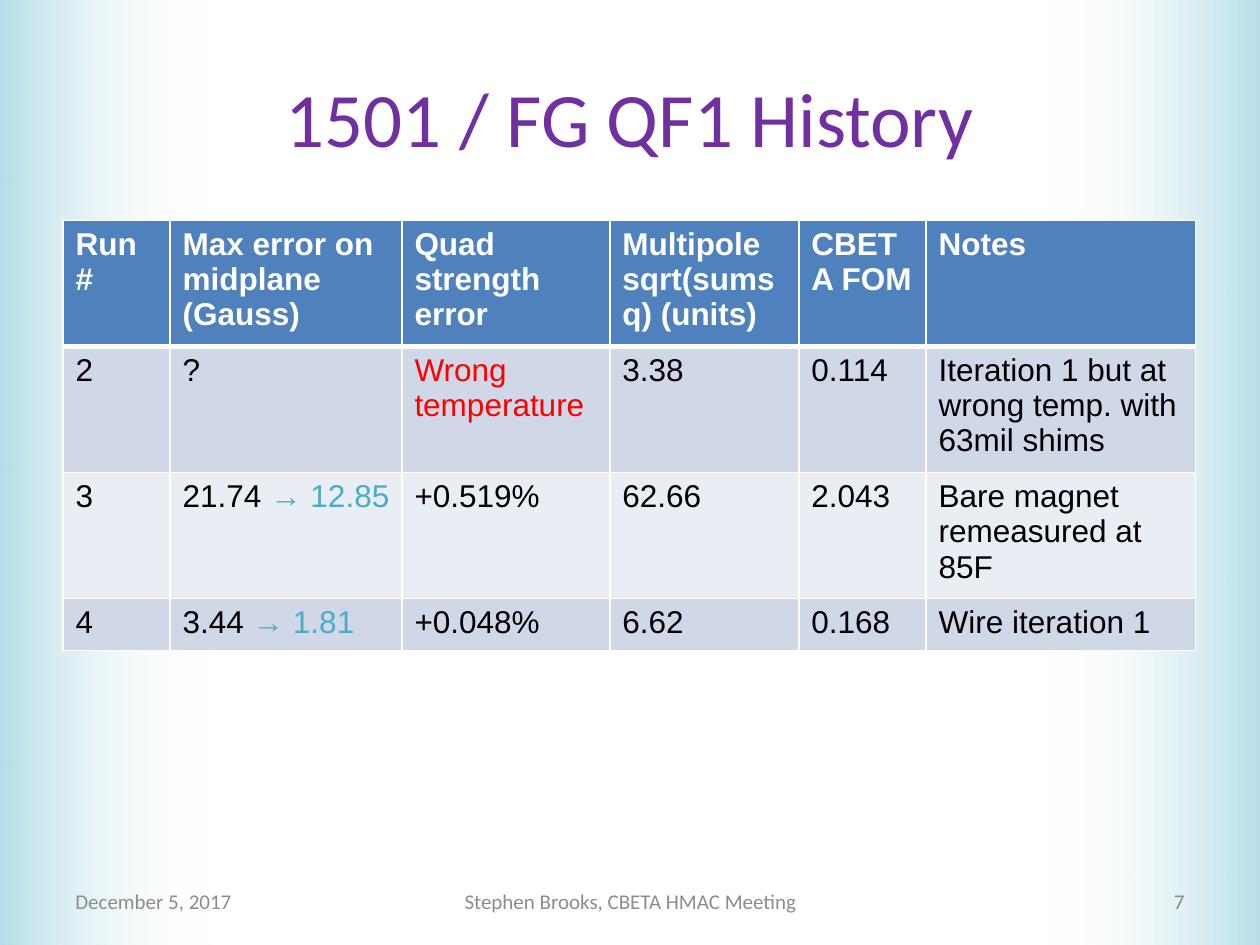
from lxml.etree import SubElement
from pptx import Presentation
from pptx.dml.color import RGBColor as RGB
from pptx.enum.shapes import MSO_SHAPE as Shape
from pptx.enum.text import MSO_ANCHOR as Anchor, PP_ALIGN as Align
from pptx.oxml.ns import qn
from pptx.util import Inches, Pt

COLORS = {
    "edge": "B7DEE8", "white": "FFFFFF", "title": "7030A0", "header": "4F81BD",
    "odd": "D0D8E8", "even": "E9EDF4", "text": "000000", "wrong": "FF0000",
    "corrected": "4BACC6", "footer": "8C8C8C", "number": "898989",
}
SLIDE_W, SLIDE_H, MARGIN, EDGE_W = 10, 7.5, 0.5, 1.69
FOOTER_TOP, FOOTER_H = 6.95, 0.4

TITLE = "1501 / FG QF1 History"
HEADERS = ["Run #", "Max error on midplane (Gauss)", "Quad strength error",
           "Multipole sqrt(sumsq) (units)", "CBETA FOM", "Notes"]
WIDTHS = [0.85, 1.84, 1.65, 1.5, 1.01, 2.14]
TABLE_TOP, ROW_H = 1.75, 0.41
RUNS = [
    ["2", "?", [("Wrong temperature", "wrong")], "3.38", "0.114",
     "Iteration 1 but at wrong temp. with 63mil shims"],
    ["3", [("21.74 ", "text"), ("→ 12.85", "corrected")], "+0.519%", "62.66", "2.043",
     "Bare magnet remeasured at 85F"],
    ["4", [("3.44 ", "text"), ("→ 1.81", "corrected")], "+0.048%", "6.62", "0.168",
     "Wire iteration 1"],
]
FOOTERS = [
    ("December 5, 2017", MARGIN, 2.33, Align.LEFT, "footer"),
    ("Stephen Brooks, CBETA HMAC Meeting", 3.42, 3.17, Align.CENTER, "footer"),
    ("7", 7.17, 2.33, Align.RIGHT, "number"),
]


def color(name):
    return RGB.from_string(COLORS[name])


def add_edge(slide, left, rotation):
    edge = slide.shapes.add_shape(
        Shape.RECTANGLE, Inches(left), 0, Inches(EDGE_W), Inches(SLIDE_H))
    edge.rotation = rotation
    edge.shadow.inherit = False
    edge.line.fill.background()
    edge.fill.gradient()
    edge.fill.gradient_angle = 0
    for stop, name in zip(edge.fill.gradient_stops, ("edge", "white")):
        stop.color.rgb = color(name)
    clear = edge.element.spPr.findall(".//" + qn("a:srgbClr"))[-1]
    SubElement(clear, qn("a:alpha"), val="0")


def add_text(slide, text, box, size, color_name, align):
    frame = slide.shapes.add_textbox(*map(Inches, box)).text_frame
    frame.word_wrap = True
    frame.vertical_anchor = Anchor.MIDDLE
    line = frame.paragraphs[0]
    line.text, line.alignment = text, align
    line.font.name, line.font.size = "Calibri", Pt(size)
    line.font.color.rgb = color(color_name)


def add_borders(cell, row):
    widths = {"L": 1, "R": 1, "T": 3 if row == 1 else 1, "B": 3 if row == 0 else 1}
    properties = cell._tc.get_or_add_tcPr()
    for side, width in widths.items():
        border = SubElement(properties, qn(f"a:ln{side}"), w=str(Pt(width)))
        fill = SubElement(border, qn("a:solidFill"))
        SubElement(fill, qn("a:srgbClr"), val=COLORS["white"])


def fill_cell(cell, content, row):
    is_header = row == 0
    add_borders(cell, row)
    cell.fill.solid()
    cell.fill.fore_color.rgb = color("header" if is_header else "odd" if row % 2 else "even")
    if isinstance(content, str):
        content = [(content, "white" if is_header else "text")]
    line = cell.text_frame.paragraphs[0]
    line.font.name, line.font.size, line.font.bold = "Arial", Pt(18), is_header
    for text, color_name in content:
        run = line.add_run()
        run.text = text
        run.font.color.rgb = color(color_name)


def add_history(slide):
    rows = [HEADERS, *RUNS]
    history = slide.shapes.add_table(
        len(rows), len(HEADERS), Inches(MARGIN), Inches(TABLE_TOP),
        Inches(sum(WIDTHS)), Inches(ROW_H * len(rows))).table
    for column, width in zip(history.columns, WIDTHS):
        column.width = Inches(width)
    for r, row in enumerate(rows):
        for c, content in enumerate(row):
            fill_cell(history.cell(r, c), content, r)


def main():
    deck = Presentation()
    deck.slide_width, deck.slide_height = Inches(SLIDE_W), Inches(SLIDE_H)
    slide = deck.slides.add_slide(deck.slide_layouts[6])
    slide.background.fill.solid()
    slide.background.fill.fore_color.rgb = color("white")
    add_edge(slide, SLIDE_W - EDGE_W, 180)
    add_edge(slide, 0, 0)
    add_text(slide, TITLE, (MARGIN, 0.3, SLIDE_W - 2 * MARGIN, 1.25), 44, "title", Align.CENTER)
    add_history(slide)
    for text, left, width, align, color_name in FOOTERS:
        add_text(slide, text, (left, FOOTER_TOP, width, FOOTER_H), 12, color_name, align)
    deck.save("out.pptx")


if __name__ == "__main__":
    main()
